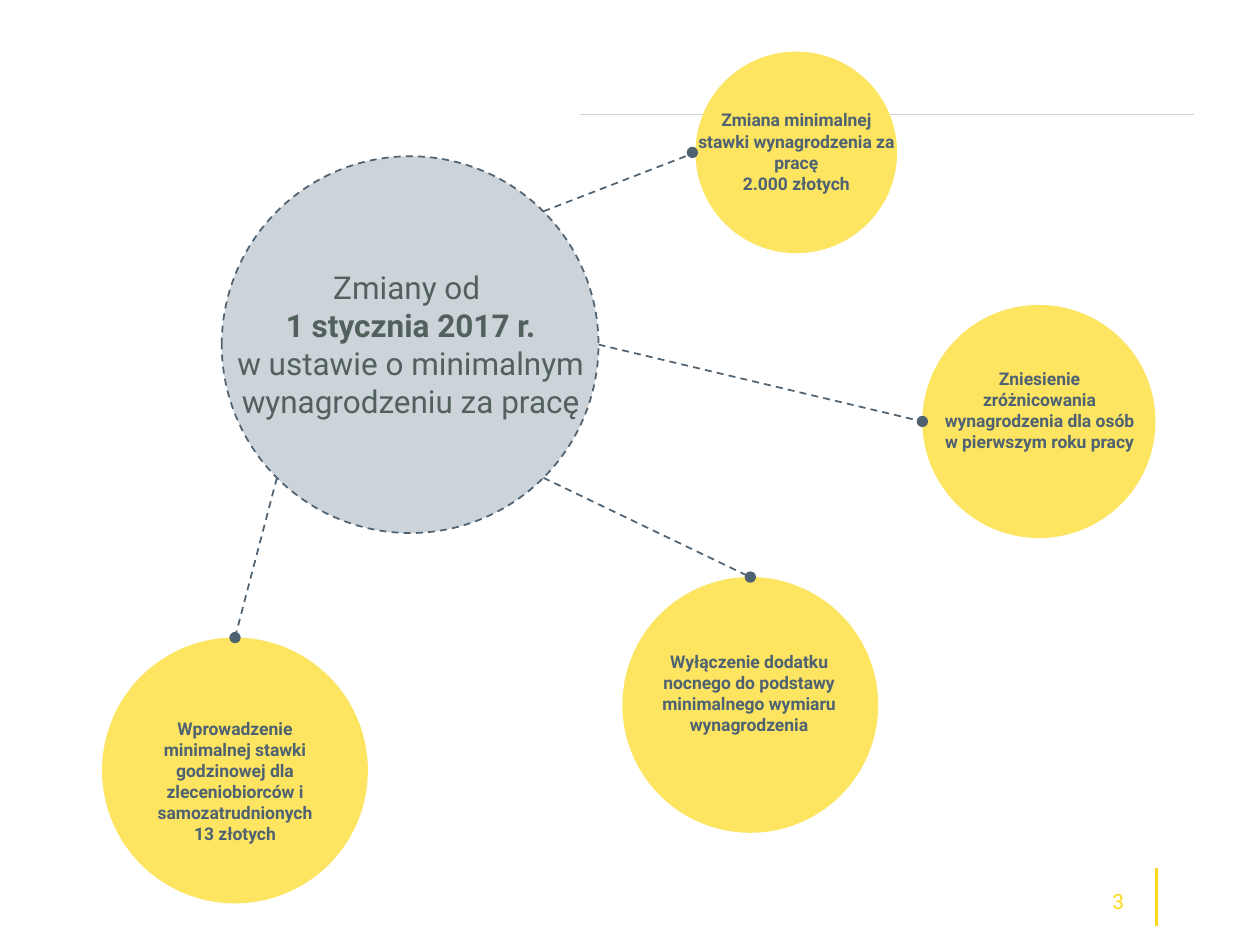
from dataclasses import dataclass
from math import cos, radians, sin

from lxml import etree
from pptx import Presentation
from pptx import util as u
from pptx.dml.color import RGBColor
from pptx.enum import dml, shapes, text
from pptx.oxml import ns

COLS, ROWS = 100, 75
WIDE, HIGH = u.Inches(10), u.Inches(7.5)


@dataclass(frozen=True)
class Theme:
    font: str = "Roboto"
    navy: str = "4F6272"
    grey: str = "CCD4D9"
    gold: str = "FDE461"
    amber: str = "FCD91D"
    moss: str = "52615D"
    head: int = 18
    page: int = 12
    body: int = 10


@dataclass(frozen=True)
class Box:
    col: float
    row: float
    wide: float
    high: float

    def place(self) -> tuple:
        return across(self.col), down(self.row), across(self.wide), down(self.high)


@dataclass(frozen=True)
class Disc:
    col: float
    row: float
    size: float

    def rim(self, angle: float) -> tuple:
        """Point on the edge, clockwise from the right."""
        half, turn = self.size / 2, radians(angle)
        return (self.col + half + half * cos(turn),
                self.row + half + half * sin(turn))


@dataclass(frozen=True)
class Topic:
    disc: Disc
    box: Box
    lines: tuple
    leave: float  # angle on the hub
    land: float  # angle on the topic's disc
    nudge: float = 0  # shift of the dot, in columns


T = Theme()
LEFT, TOP = 180, 270
DOT = 0.9
HUB = Disc(17.6, 12.4, 29.9)
TITLE = ("Zmiany od ",
         "1 stycznia 2017 r.\vw ustawie o minimalnym wynagrodzeniu za pracę")
TOPICS = (
    Topic(Disc(55.2, 4.1, 16), Box(54.4, 8.2, 17.6, 9.4),
          ("Zmiana minimalnej stawki wynagrodzenia za pracę", "2.000 złotych"),
          -45, LEFT, -0.25),
    Topic(Disc(73.2, 24.2, 18.5), Box(73.8, 28.7, 17.4, 9.4),
          ("Zniesienie zróżnicowania wynagrodzenia dla osób "
           "w pierwszym roku pracy",),
          0, LEFT),
    Topic(Disc(49.4, 45.8, 20.3), Box(51.3, 51.2, 16.3, 11.1),
          ("Wyłączenie dodatku nocnego do podstawy minimalnego "
           "wymiaru wynagrodzenia",),
          45, TOP),
    Topic(Disc(8.1, 50.6, 21.1), Box(10, 56.5, 17.3, 11.1),
          ("Wprowadzenie minimalnej stawki godzinowej dla "
           "zleceniobiorców i samozatrudnionych", "13 złotych"),
          135, TOP),
)


def across(cols: float) -> int:
    return round(WIDE * cols / COLS)


def down(rows: float) -> int:
    return round(HIGH * rows / ROWS)


def stroke(line, tint: str, width: float, dash: bool) -> None:
    line.color.rgb = RGBColor.from_string(tint)
    line.width = u.Pt(width)
    if dash:
        line.dash_style = dml.MSO_LINE.DASH


def draw_line(slide, start: tuple, end: tuple, tint: str, width: float,
              dash: bool = False) -> None:
    line = slide.shapes.add_connector(
        shapes.MSO_CONNECTOR.STRAIGHT, across(start[0]), down(start[1]),
        across(end[0]), down(end[1]))
    stroke(line.line, tint, width, dash)
    etree.SubElement(line._element.spPr, ns.qn("a:effectLst"))


def draw_disc(slide, disc: Disc, fill: str, edge: str = "") -> None:
    oval = slide.shapes.add_shape(
        shapes.MSO_SHAPE.OVAL,
        *Box(disc.col, disc.row, disc.size, disc.size).place())
    oval.shadow.inherit = False
    oval.fill.solid()
    oval.fill.fore_color.rgb = RGBColor.from_string(fill)
    if edge:
        stroke(oval.line, edge, 1, True)
    else:
        oval.line.fill.background()


def draw_text(slide, box: Box, lines: tuple, size: int, tint: str,
              bold: bool = False, align=text.PP_ALIGN.CENTER):
    frame = slide.shapes.add_textbox(*box.place()).text_frame
    frame.word_wrap = True
    frame.text = "\n".join(lines)
    for para in frame.paragraphs:
        para.alignment = align
        for run in para.runs:
            run.font.name = T.font
            run.font.size = u.Pt(size)
            run.font.bold = bold
            run.font.color.rgb = RGBColor.from_string(tint)
    return frame


def main() -> None:
    deck = Presentation()
    deck.slide_width, deck.slide_height = WIDE, HIGH
    slide = deck.slides.add_slide(deck.slide_layouts[6])

    # Rules and page number
    draw_line(slide, (91.8, 68.9), (91.8, 73.5), T.amber, 1.5)
    draw_line(slide, (46, 9.1), (94.8, 9.1), T.grey, 0.75)
    page = draw_text(slide, Box(70.6, 69.5, 19.6, 4), ("3",), T.page, T.amber,
                     align=text.PP_ALIGN.RIGHT)
    page.vertical_anchor = text.MSO_ANCHOR.MIDDLE

    # Topics with their spokes
    for topic in TOPICS:
        end = topic.disc.rim(topic.land)
        draw_disc(slide, topic.disc, T.gold)
        draw_line(slide, HUB.rim(topic.leave), end, T.navy, 1, True)
        draw_disc(slide, Disc(end[0] + topic.nudge - DOT / 2,
                              end[1] - DOT / 2, DOT), T.navy)
        draw_text(slide, topic.box, topic.lines, T.body, T.navy, True)

    # Hub
    draw_disc(slide, HUB, T.grey, T.navy)
    title = draw_text(slide, Box(16.6, 20.8, 32, 13.1), TITLE, T.head, T.moss)
    title.paragraphs[1].runs[0].font.bold = True

    deck.save("out.pptx")


if __name__ == "__main__":
    main()
